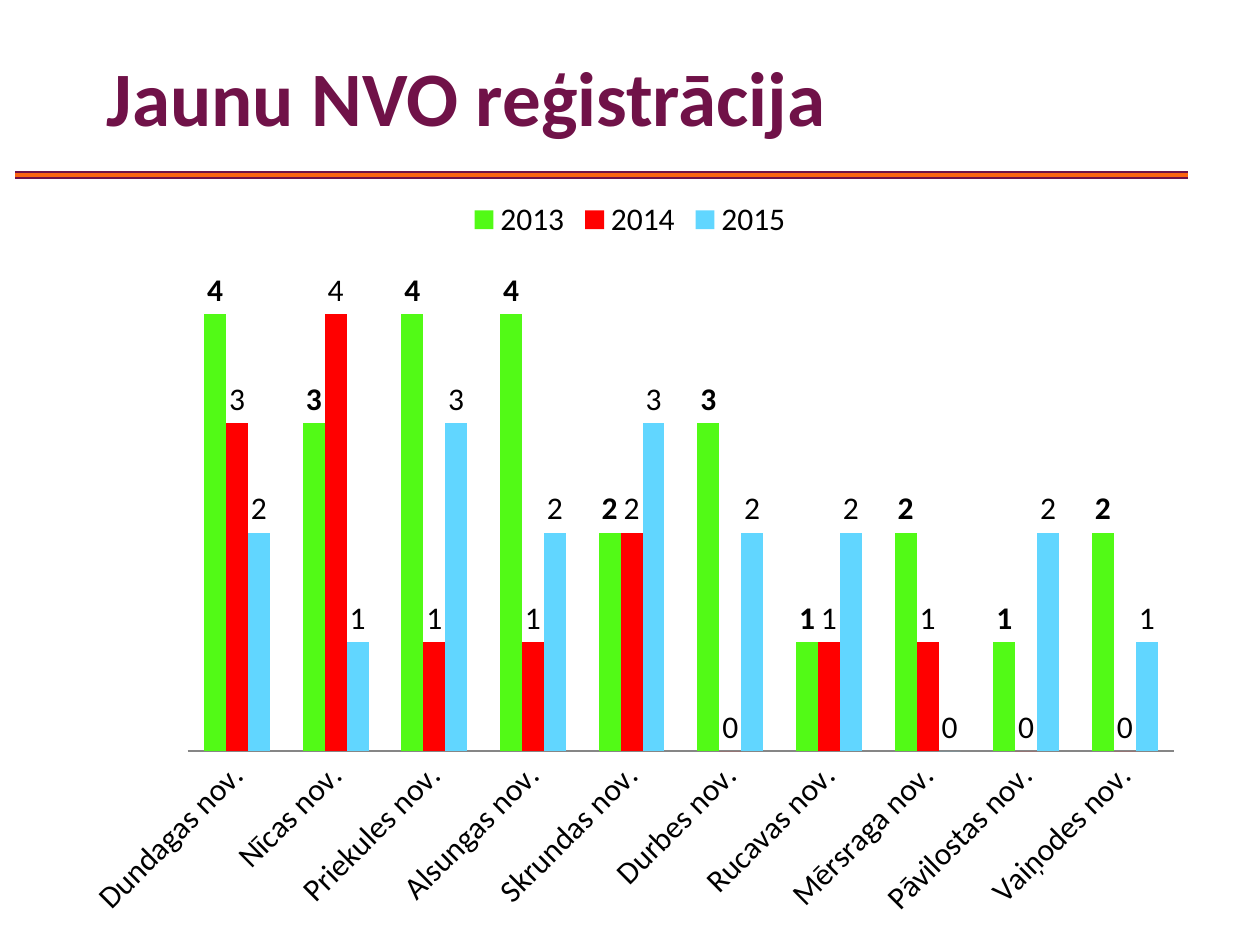
"""Build a slide charting the registration of new NGOs by municipality."""
import pptx
import pptx.chart.data
import pptx.dml.color
import pptx.enum.chart
import pptx.enum.shapes
import pptx.enum.text
import pptx.oxml.ns
import pptx.oxml.xmlchemy
import pptx.util

Pt = pptx.util.Pt
FONT = "Calibri"
COLORS = {
    "plum": "701248", "orange": "FC6410", "black": "000000", "axis": "868686",
    "2013": "52FA16", "2014": "FF0000", "2015": "61D6FF",
}
TITLE = "Jaunu NVO reģistrācija"
MUNICIPALITIES = [
    "Dundagas", "Nīcas", "Priekules", "Alsungas", "Skrundas",
    "Durbes", "Rucavas", "Mērsraga", "Pāvilostas", "Vaiņodes",
]
REGISTRATIONS = {
    "2013": [4, 3, 4, 4, 2, 3, 1, 2, 1, 2],
    "2014": [3, 4, 1, 1, 2, 0, 1, 1, 0, 0],
    "2015": [2, 1, 3, 2, 3, 2, 2, 0, 2, 1],
}
BOLD_YEAR = "2013"
RULES = [("plum", 4.5), ("orange", 2.25)]
RULE_LEFT, RULE_RIGHT, RULE_Y = 8.64, 679, 100
PLOT_AREA = {"x": 0.11, "y": 0.1, "w": 0.87, "h": 0.66}


def rgb(name):
    return pptx.dml.color.RGBColor.from_string(COLORS[name])


def style_font(font, size, color, bold=False):
    font.name, font.size, font.bold = FONT, Pt(size), bold
    font.color.rgb = rgb(color)


def add_rule(slide, color, width):
    rule = slide.shapes.add_connector(
        pptx.enum.shapes.MSO_CONNECTOR.STRAIGHT,
        Pt(RULE_LEFT), Pt(RULE_Y), Pt(RULE_RIGHT), Pt(RULE_Y))
    rule.line.color.rgb = rgb(color)
    rule.line.width = Pt(width)
    rule._element.spPr.append(pptx.oxml.xmlchemy.OxmlElement("a:effectLst"))


def add_title(slide):
    title = slide.shapes.add_textbox(Pt(54), Pt(9.36), Pt(625), Pt(90.72))
    frame = title.text_frame
    frame.word_wrap = True
    frame.vertical_anchor = pptx.enum.text.MSO_ANCHOR.MIDDLE
    frame.text = TITLE
    style_font(frame.paragraphs[0].font, 44, "plum", True)


def place_plot_area(chart):
    plot_area = chart._chartSpace.chart.plotArea
    for old in plot_area.findall(pptx.oxml.ns.qn("c:layout")):
        plot_area.remove(old)
    layout = pptx.oxml.xmlchemy.OxmlElement("c:layout")
    manual = pptx.oxml.xmlchemy.OxmlElement("c:manualLayout")
    settings = {"layoutTarget": "inner", "xMode": "edge", "yMode": "edge", **PLOT_AREA}
    for tag, value in settings.items():
        setting = pptx.oxml.xmlchemy.OxmlElement(f"c:{tag}")
        setting.set("val", str(value))
        manual.append(setting)
    layout.append(manual)
    plot_area.insert(0, layout)


def add_registrations(slide):
    chart_data = pptx.chart.data.CategoryChartData(number_format="General")
    chart_data.categories = [f"{name} nov." for name in MUNICIPALITIES]
    for year, counts in REGISTRATIONS.items():
        chart_data.add_series(year, counts)
    chart = slide.shapes.add_chart(
        pptx.enum.chart.XL_CHART_TYPE.COLUMN_CLUSTERED,
        Pt(36), Pt(105.84), Pt(648), Pt(425.52), chart_data).chart
    style_font(chart.font, 18, "black")
    chart.has_title = False
    chart.has_legend = True
    chart.legend.position = pptx.enum.chart.XL_LEGEND_POSITION.TOP
    chart.legend.include_in_layout = False

    counts_axis = chart.value_axis
    counts_axis.minimum_scale, counts_axis.maximum_scale = 0, 4.5
    counts_axis.has_major_gridlines = False
    counts_axis.visible = False
    names_axis = chart.category_axis
    names_axis.major_tick_mark = pptx.enum.chart.XL_TICK_MARK.NONE
    names_axis.format.line.color.rgb = rgb("axis")
    names_axis.tick_labels.font.size = Pt(18)
    names_axis._element.txPr.bodyPr.set("rot", "-2700000")

    columns = chart.plots[0]
    columns.gap_width, columns.overlap = 150, 0
    columns.vary_by_categories = False
    for year in columns.series:
        year.format.fill.solid()
        year.format.fill.fore_color.rgb = rgb(year.name)
        labels = year.data_labels
        labels.show_value = True
        labels.position = pptx.enum.chart.XL_LABEL_POSITION.OUTSIDE_END
        style_font(labels.font, 18, "black", year.name == BOLD_YEAR)
    place_plot_area(chart)


def main():
    deck = pptx.Presentation()
    deck.slide_width, deck.slide_height = Pt(720), Pt(540)
    slide = deck.slides.add_slide(deck.slide_layouts[6])
    for color, width in RULES:
        add_rule(slide, color, width)
    add_title(slide)
    add_registrations(slide)
    deck.save("out.pptx")


if __name__ == "__main__":
    main()
